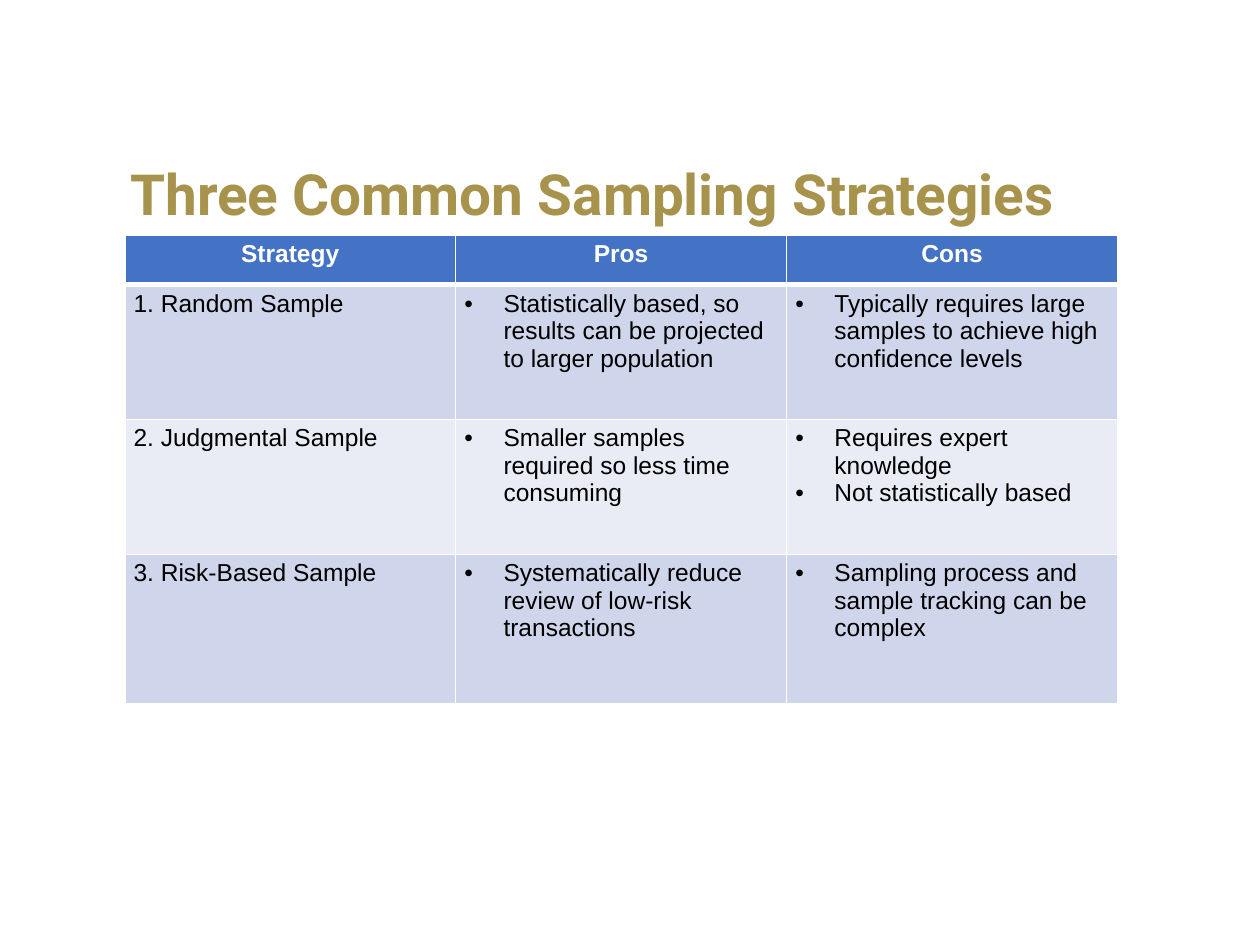
import pptx
import pptx.dml.color
import pptx.enum.text
import pptx.oxml.ns
import pptx.util
from lxml import etree
from pptx.util import Inches

COLORS = {"gold": "A7934B", "header": "4472C4", "band": "CFD5EA",
          "light": "E9EBF5", "white": "FFFFFF", "black": "000000"}
TITLE = "Three Common Sampling Strategies"
HEADERS = ["Strategy", "Pros", "Cons"]
STRATEGIES = [
    ("1. Random Sample",
     ["Statistically based, so results can be projected to larger population"],
     ["Typically requires large samples to achieve high confidence levels"]),
    ("2. Judgmental Sample",
     ["Smaller samples required so less time consuming"],
     ["Requires expert knowledge", "Not statistically based"]),
    ("3. Risk-Based Sample",
     ["Systematically reduce review of low-risk transactions"],
     ["Sampling process and sample tracking can be complex"]),
]
ROW_HEIGHTS = [0.39, 1.07, 1.07, 1.19]
ALIGN = pptx.enum.text.PP_ALIGN


def rgb(name):
    return pptx.dml.color.RGBColor.from_string(COLORS[name])


def set_font(font, name, size, color, bold):
    font.name, font.size, font.bold = name, pptx.util.Pt(size), bold
    font.color.rgb = rgb(color)


def sub(parent, tag, **attrs):
    return etree.SubElement(parent, pptx.oxml.ns.qn(tag), attrs)


def add_bullet(p):
    pPr = p._p.get_or_add_pPr()
    pPr.set("marL", str(Inches(0.31)))
    pPr.set("indent", str(Inches(-0.31)))
    sub(pPr, "a:buFont", typeface="Arial")
    sub(pPr, "a:buChar", char="•")


def set_borders(cell, top, bottom):
    """Draw white borders, with top and bottom widths in points."""
    tcPr = cell._tc.get_or_add_tcPr()
    for side, width in (("L", 1), ("R", 1), ("T", top), ("B", bottom)):
        ln = sub(tcPr, f"a:ln{side}", w=str(pptx.util.Pt(width)))
        sub(sub(ln, "a:solidFill"), "a:srgbClr", val=COLORS["white"])


def fill_cell(cell, lines, row, bulleted):
    header = row == 0
    set_borders(cell, 3 if row == 1 else 1, 3 if header else 1)
    cell.fill.solid()
    cell.fill.fore_color.rgb = rgb("header" if header else "band" if row % 2 else "light")
    cell.margin_left = cell.margin_right = Inches(0.07)
    cell.margin_top = cell.margin_bottom = Inches(0.04)
    tf = cell.text_frame
    tf.text = "\n".join(lines)
    for p in tf.paragraphs:
        p.alignment = ALIGN.CENTER if header else ALIGN.LEFT
        if bulleted:
            add_bullet(p)
        for r in p.runs:
            set_font(r.font, "Arial", 14, "white" if header else "black", header)


def add_title(s, x, y, w, h):
    sp = s.shapes.title
    sp.left, sp.top, sp.width, sp.height = map(Inches, (x, y, w, h))
    tf = sp.text_frame
    tf.text = TITLE
    tf.word_wrap = True
    tf.auto_size = pptx.enum.text.MSO_AUTO_SIZE.NONE
    tf.vertical_anchor = pptx.enum.text.MSO_ANCHOR.MIDDLE
    p = tf.paragraphs[0]
    p.alignment, p.line_spacing = ALIGN.CENTER, 0.9
    set_font(p.runs[0].font, "Roboto", 32.4, "gold", True)


def add_strategy_table(s, x, y, w):
    rows = [[[name] for name in HEADERS]]
    rows += [[[name], pros, cons] for name, pros, cons in STRATEGIES]
    table = s.shapes.add_table(len(rows), len(HEADERS), Inches(x), Inches(y),
                               Inches(w), Inches(sum(ROW_HEIGHTS))).table
    for i, row in enumerate(rows):
        table.rows[i].height = Inches(ROW_HEIGHTS[i])
        for j, lines in enumerate(row):
            fill_cell(table.cell(i, j), lines, i, bulleted=i > 0 and j > 0)


def main():
    prs = pptx.Presentation()
    prs.slide_width, prs.slide_height = Inches(10), Inches(7.5)
    s = prs.slides.add_slide(prs.slide_layouts[5])
    add_title(s, 0.88, 1.15, 7.64, 0.83)
    add_strategy_table(s, 0.99, 1.87, 7.88)
    prs.save("out.pptx")


if __name__ == "__main__":
    main()
